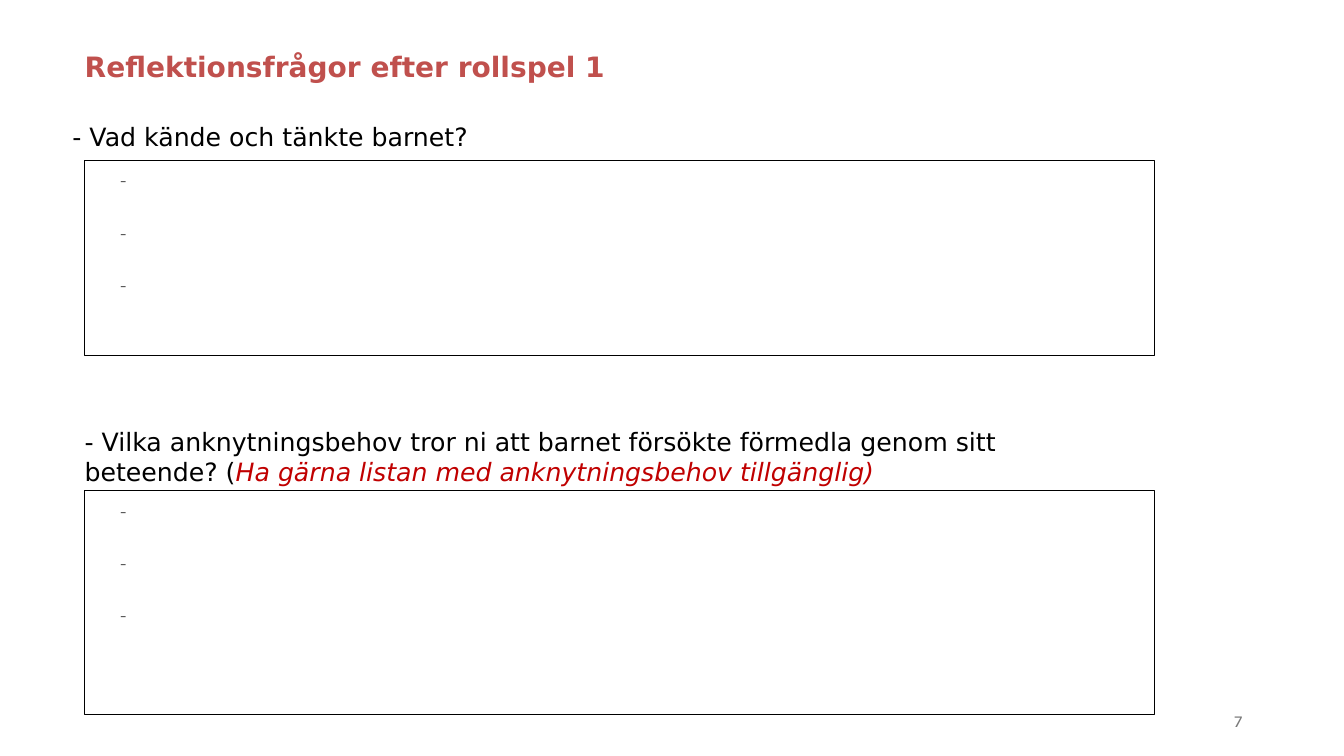
from pptx import Presentation
from pptx.dml.color import RGBColor
from pptx.enum import shapes, text
from pptx.util import Inches, Pt

COLORS = {"heading": "C0504D", "body": "000000", "hint": "C00000",
          "answer": "595959", "number": "797979", "paper": "FFFFFF"}

STYLES = {
    "heading": {"name": "DejaVu Sans", "size": Pt(20), "bold": True},
    "body": {"name": "DejaVu Sans", "size": Pt(18)},
    "hint": {"name": "DejaVu Sans", "size": Pt(18), "italic": True},
    "answer": {"name": "Cambria", "size": Pt(15)},
    "number": {"name": "Karla", "size": Pt(12)},
}

TITLE = "Reflektionsfrågor efter rollspel 1"
TITLE_AREA = (0.74, 0.44, 8.58, 0.44)
PAGE_NUMBER = "7"
PAGE_NUMBER_AREA = (9.42, 6.95, 3, 0.4)

# Each question: area, styled runs, then top and height of its answer box
QUESTIONS = [
    ((0.62, 1.15, 6.67, 0.4),
     [("body", "- Vad kände och tänkte barnet?")],
     1.59, 1.94),
    ((0.74, 4.18, 10.39, 1.15),
     [("body", "- Vilka anknytningsbehov tror ni att barnet försökte "
               "förmedla genom sitt beteende? ("),
      ("hint", "Ha gärna listan med anknytningsbehov tillgänglig)")],
     4.87, 2.22),
]
ANSWER_LEFT, ANSWER_WIDTH = 0.84, 10.61
ANSWER_LINES = ["-"] * 3
ANSWER_SPACING = {"alignment": text.PP_ALIGN.LEFT, "line_spacing": 1.07,
                  "space_before": Pt(12), "space_after": Pt(6)}


def color(name):
    return RGBColor.from_string(COLORS[name])


def set_attributes(target, values):
    for name, value in values.items():
        setattr(target, name, value)


def add_run(paragraph, style, words):
    run = paragraph.add_run()
    run.text = words
    set_attributes(run.font, STYLES[style])
    run.font.color.rgb = color(style)


def prepare_frame(shape, anchor=text.MSO_ANCHOR.TOP):
    """Make the text wrap at a fixed size and return its first paragraph."""
    frame = shape.text_frame
    set_attributes(frame, {"word_wrap": True, "vertical_anchor": anchor,
                           "auto_size": text.MSO_AUTO_SIZE.NONE})
    return frame.paragraphs[0]


def add_title(slide):
    title = slide.shapes.title
    sides = map(Inches, TITLE_AREA)
    set_attributes(title, dict(zip(("left", "top", "width", "height"), sides)))
    paragraph = prepare_frame(title)
    paragraph.alignment = text.PP_ALIGN.LEFT
    add_run(paragraph, "heading", TITLE)


def add_text(slide, area, runs, anchor=text.MSO_ANCHOR.TOP):
    box = slide.shapes.add_textbox(*map(Inches, area))
    paragraph = prepare_frame(box, anchor)
    for style, words in runs:
        add_run(paragraph, style, words)
    return paragraph


def add_answer_box(slide, top, height):
    area = (ANSWER_LEFT, top, ANSWER_WIDTH, height)
    box = slide.shapes.add_shape(shapes.MSO_SHAPE.RECTANGLE, *map(Inches, area))
    box.shadow.inherit = False
    box.fill.solid()
    box.fill.fore_color.rgb = color("paper")
    box.line.color.rgb = color("body")
    box.line.width = Pt(0.75)
    paragraph = prepare_frame(box)
    for index, words in enumerate(ANSWER_LINES):
        if index:
            paragraph = box.text_frame.add_paragraph()
        set_attributes(paragraph, ANSWER_SPACING)
        properties = paragraph._p.get_or_add_pPr()
        properties.set("marL", str(Inches(0.5)))
        properties.set("indent", str(Inches(-0.25)))
        add_run(paragraph, "answer", words)


def main():
    presentation = Presentation()
    presentation.slide_width = Inches(13.33)
    presentation.slide_height = Inches(7.5)
    slide = presentation.slides.add_slide(presentation.slide_layouts[5])

    add_title(slide)
    for area, runs, answer_top, answer_height in QUESTIONS:
        add_text(slide, area, runs)
        add_answer_box(slide, answer_top, answer_height)
    number = add_text(slide, PAGE_NUMBER_AREA, [("number", PAGE_NUMBER)],
                      text.MSO_ANCHOR.MIDDLE)
    number.alignment = text.PP_ALIGN.RIGHT

    presentation.save("out.pptx")


if __name__ == "__main__":
    main()
